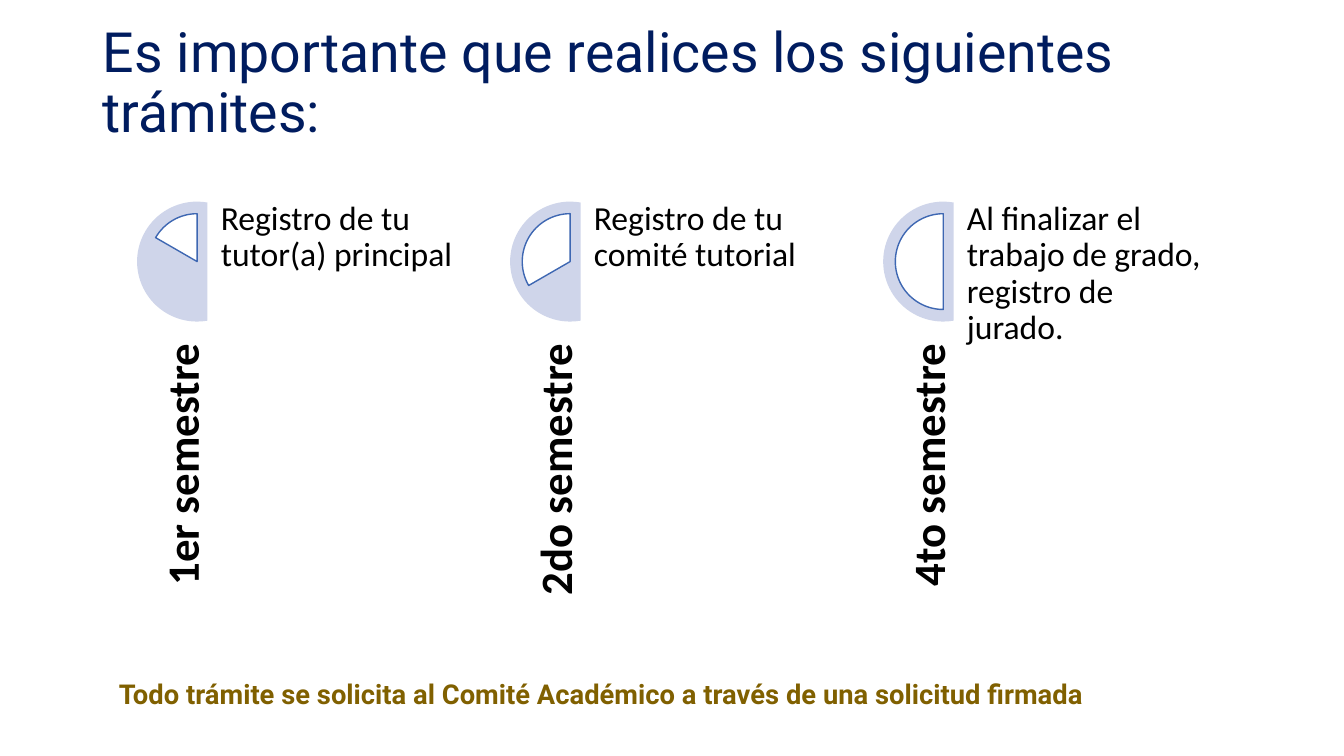
from pptx import Presentation
from pptx.dml.color import RGBColor
from pptx.enum.shapes import MSO_SHAPE
from pptx.enum.text import MSO_ANCHOR, MSO_AUTO_SIZE, PP_ALIGN
from pptx.util import Inches, Pt

CHORD, PIE = MSO_SHAPE.CHORD, MSO_SHAPE.PIE
TOP, MIDDLE, BOTTOM = MSO_ANCHOR.TOP, MSO_ANCHOR.MIDDLE, MSO_ANCHOR.BOTTOM
LEFT, RIGHT = PP_ALIGN.LEFT, PP_ALIGN.RIGHT
NO_FIT = MSO_AUTO_SIZE.NONE

COLORS = {
    "navy": "001C5F",
    "disc": "CFD5EA",
    "white": "FFFFFF",
    "edge": "3E67B2",
    "black": "000000",
    "gold": "806000",
}
STYLES = {
    "title": ({"name": "Roboto", "size": Pt(39.6), "bold": False}, "navy"),
    "term": ({"name": "Calibri", "size": Pt(32), "bold": True}, "black"),
    "task": ({"name": "Calibri", "size": Pt(24), "bold": False}, "black"),
    "note": ({"name": "Roboto", "size": Pt(19.5), "bold": True}, "gold"),
}
STEPS = [
    ("1er semestre", "Registro de tu tutor(a) principal", 126),
    ("2do semestre", "Registro de tu comité tutorial", 90),
    ("4to semestre", "Al finalizar el trabajo de grado, registro de jurado.", 54),
]


def tint(name):
    return RGBColor.from_string(COLORS[name])


def place(shape, box):
    for key, value in zip(("left", "top", "width", "height"), box):
        setattr(shape, key, Inches(value))


def write(shape, text, style, anchor, insets, align=LEFT):
    frame = shape.text_frame
    frame.text = text
    frame.word_wrap = True
    frame.auto_size = NO_FIT
    frame.vertical_anchor = anchor
    for side, value in zip(("left", "top", "right", "bottom"), insets):
        setattr(frame, "margin_" + side, Inches(value))
    para = frame.paragraphs[0]
    para.alignment = align
    para.line_spacing = 0.9
    para.space_before = Pt(0)
    values, color = STYLES[style]
    font = para.runs[0].font
    for key, value in values.items():
        setattr(font, key, value)
    font.color.rgb = tint(color)


def add_text(slide, box, *args):
    shape = slide.shapes.add_textbox(*map(Inches, box))
    write(shape, *args)
    return shape


def add_arc(slide, kind, box, angles, fill, line=None):
    shape = slide.shapes.add_shape(kind, *map(Inches, box))
    shape.shadow.inherit = False
    for index, angle in enumerate(angles):
        shape.adjustments[index] = angle
    shape.fill.solid()
    shape.fill.fore_color.rgb = tint(fill)
    if line:
        shape.line.color.rgb = tint(line)
        shape.line.width = Pt(1)
    else:
        shape.line.fill.background()


def add_title(slide, box):
    title = slide.shapes.title
    place(title, box)
    text = "Es importante que realices los siguientes trámites:"
    write(title, text, "title", MIDDLE, (0.1, 0.05, 0.1, 0.63))


def add_step(slide, box, term, task, start):
    x, y, width, height = box
    disc, gap = 1.19, 0.12
    pie = disc - 2 * gap
    add_arc(slide, CHORD, (x, y, disc, disc), (48, 168), "disc")
    add_arc(slide, PIE, (x + gap, y + gap, pie, pie), (start, 162), "white", "edge")
    long, thick = 3.45, 0.71
    mid_y = y + height - long / 2
    label = (x + (thick - long) / 2, mid_y - thick / 2, long, thick)
    shape = add_text(slide, label, term, "term", BOTTOM, (0, 0, 0.1, 0), RIGHT)
    shape.rotation = 270
    indent = 0.83
    body = (x + indent, y, width - indent, height)
    add_text(slide, body, task, "task", TOP, (0, 0, 0, 0))


def add_steps(slide, box):
    x, y, width, height = box
    step = 3.7
    span = width - step * (len(STEPS) - 1)
    for index, (term, task, start) in enumerate(STEPS):
        add_step(slide, (x + index * step, y, span, height), term, task, start)


def add_note(slide, box):
    text = "Todo trámite se solicita al Comité Académico a través de una solicitud firmada"
    add_text(slide, box, text, "note", MIDDLE, (0.1, 0.05, 0.1, 0.05))


def main():
    deck = Presentation()
    deck.slide_width = Inches(13.33)
    deck.slide_height = Inches(7.5)
    slide = deck.slides.add_slide(deck.slide_layouts[5])
    add_title(slide, (0.92, 0.4, 11.5, 1.45))
    add_steps(slide, (1.36, 2, 10.61, 4.76))
    add_note(slide, (1.08, 6.47, 10.4, 0.86))
    deck.save("out.pptx")


if __name__ == "__main__":
    main()
